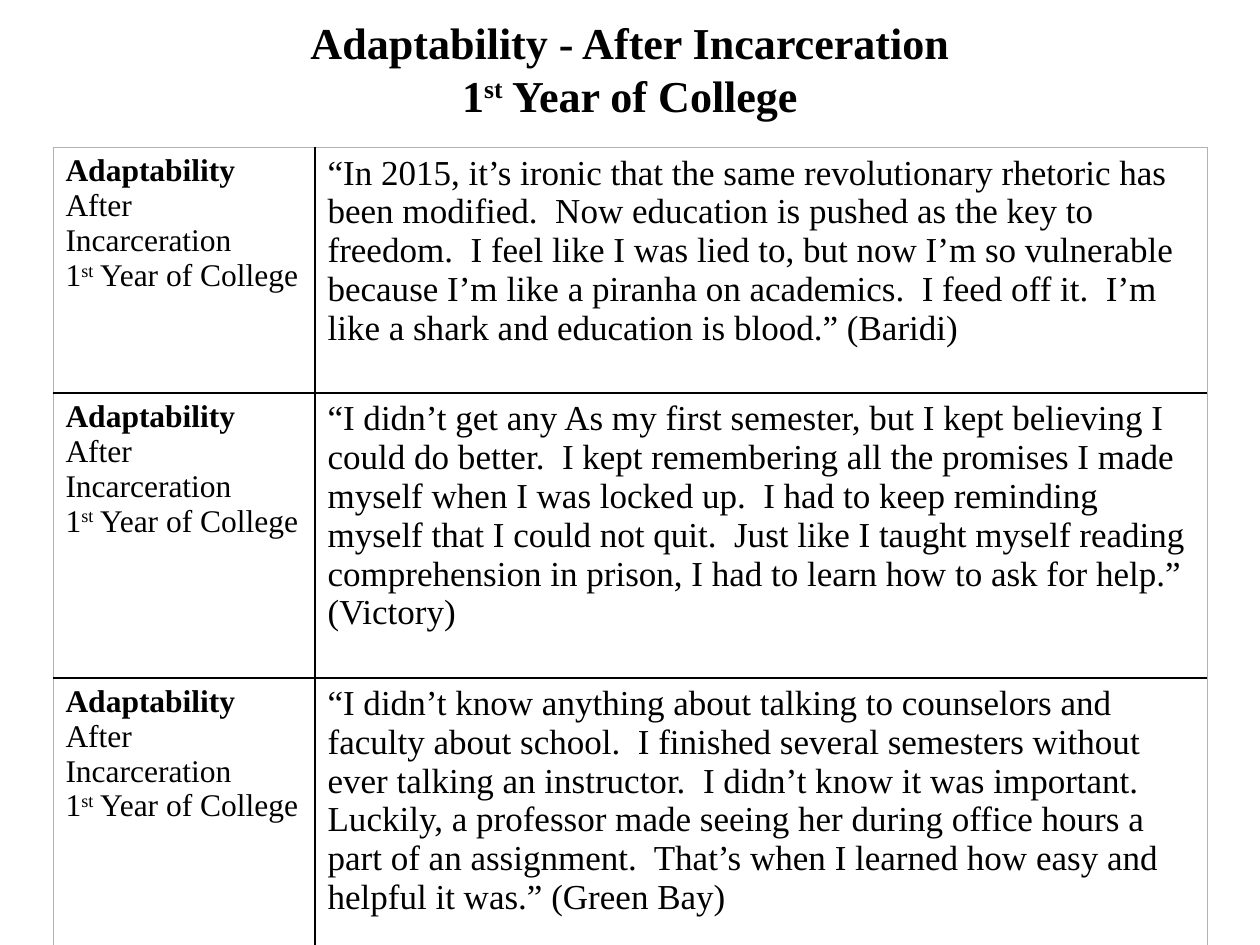
from typing import NamedTuple

from lxml.etree import SubElement
from pptx import Presentation
from pptx.dml.color import RGBColor
from pptx.enum.text import MSO_ANCHOR, MSO_AUTO_SIZE, PP_ALIGN
from pptx.oxml.ns import qn
from pptx.util import Inches, Pt

FONT = "Times New Roman"
COLORS = {"text": "000000", "inner": "000000", "outer": "B2B2B2", "paper": "FFFFFF"}
COLUMN_WIDTHS = (2.08, 7.08)


class Segment(NamedTuple):
    text: str
    bold: bool = False
    superscript: bool = False


class Quote(NamedTuple):
    text: str
    row_height: float


QUOTES = (
    Quote("“In 2015, it’s ironic that the same revolutionary rhetoric has been modified.  "
          "Now education is pushed as the key to freedom.  I feel like I was lied to, but now "
          "I’m so vulnerable because I’m like a piranha on academics.  I feed off it.  "
          "I’m like a shark and education is blood.” (Baridi)", 1.95),
    Quote("“I didn’t get any As my first semester, but I kept believing I could do better.  "
          "I kept remembering all the promises I made myself when I was locked up.  I had to "
          "keep reminding myself that I could not quit.  Just like I taught myself reading "
          "comprehension in prison, I had to learn how to ask for help.” (Victory)", 2.26),
    Quote("“I didn’t know anything about talking to counselors and faculty about school.  "
          "I finished several semesters without ever talking an instructor.  I didn’t know it "
          "was important.  Luckily, a professor made seeing her during office hours a part of "
          "an assignment.  That’s when I learned how easy and helpful it was.” (Green Bay)", 2.26),
)


def year_lines(first_line: str, bold: bool) -> list[Segment]:
    """Return a line of text followed by the line naming the first college year."""
    return [Segment(first_line, bold), Segment("\n"), Segment("1", bold),
            Segment("st", bold, True), Segment(" Year of College", bold)]


def add_segments(paragraph, segments: list[Segment], size: float) -> None:
    for segment in segments:
        if segment.text == "\n":
            paragraph.add_line_break()
            continue
        run = paragraph.add_run()
        run.text = segment.text
        font = run.font
        font.name, font.size, font.bold = FONT, Pt(size), segment.bold
        font.color.rgb = RGBColor.from_string(COLORS["text"])
        if segment.superscript:
            run._r.get_or_add_rPr().set("baseline", "30000")


def set_borders(cell, colors: dict[str, str]) -> None:
    """Draw each cell side (L, R, T, B) in its colour, below any fill in the schema."""
    properties = cell._tc.get_or_add_tcPr()
    for side, color in colors.items():
        width = Pt(1) if color == COLORS["inner"] else Pt(0.5)
        line = SubElement(properties, qn(f"a:ln{side}"), w=str(width))
        fill = SubElement(line, qn("a:solidFill"))
        SubElement(fill, qn("a:srgbClr"), val=color)


def add_title(slide) -> None:
    title = slide.shapes.title
    title.left, title.top = Inches(1), Inches(0.33)
    title.width, title.height = Inches(8), Inches(0.42)
    frame = title.text_frame
    frame.word_wrap = True
    frame.auto_size = MSO_AUTO_SIZE.NONE
    frame.vertical_anchor = MSO_ANCHOR.MIDDLE
    paragraph = frame.paragraphs[0]
    paragraph.alignment = PP_ALIGN.CENTER
    add_segments(paragraph, year_lines("Adaptability - After Incarceration", True), 25.2)


def add_quote_table(slide) -> None:
    height = sum(quote.row_height for quote in QUOTES)
    table = slide.shapes.add_table(
        len(QUOTES), len(COLUMN_WIDTHS), Inches(0.42), Inches(1.17),
        Inches(sum(COLUMN_WIDTHS)), Inches(height)).table
    table.first_row = table.horz_banding = False
    for column, width in zip(table.columns, COLUMN_WIDTHS):
        column.width = Inches(width)

    inner, outer = COLORS["inner"], COLORS["outer"]
    last_row = len(QUOTES) - 1
    for index, quote in enumerate(QUOTES):
        table.rows[index].height = Inches(quote.row_height)
        label, passage = table.cell(index, 0), table.cell(index, 1)
        top = outer if index == 0 else inner
        bottom = outer if index == last_row else inner
        set_borders(label, {"L": outer, "R": inner, "T": top, "B": bottom})
        set_borders(passage, {"L": inner, "R": outer, "T": top, "B": bottom})
        for cell in (label, passage):
            cell.fill.solid()
            cell.fill.fore_color.rgb = RGBColor.from_string(COLORS["paper"])

        frame = label.text_frame
        add_segments(frame.paragraphs[0], [Segment("Adaptability", True)], 18)
        add_segments(frame.add_paragraph(), year_lines("After Incarceration", False), 18)
        add_segments(passage.text_frame.paragraphs[0], [Segment(quote.text)], 20)


def main() -> None:
    presentation = Presentation()
    presentation.slide_width, presentation.slide_height = Inches(10), Inches(7.5)
    slide = presentation.slides.add_slide(presentation.slide_layouts[5])
    add_title(slide)
    add_quote_table(slide)
    presentation.save("out.pptx")


if __name__ == "__main__":
    main()
